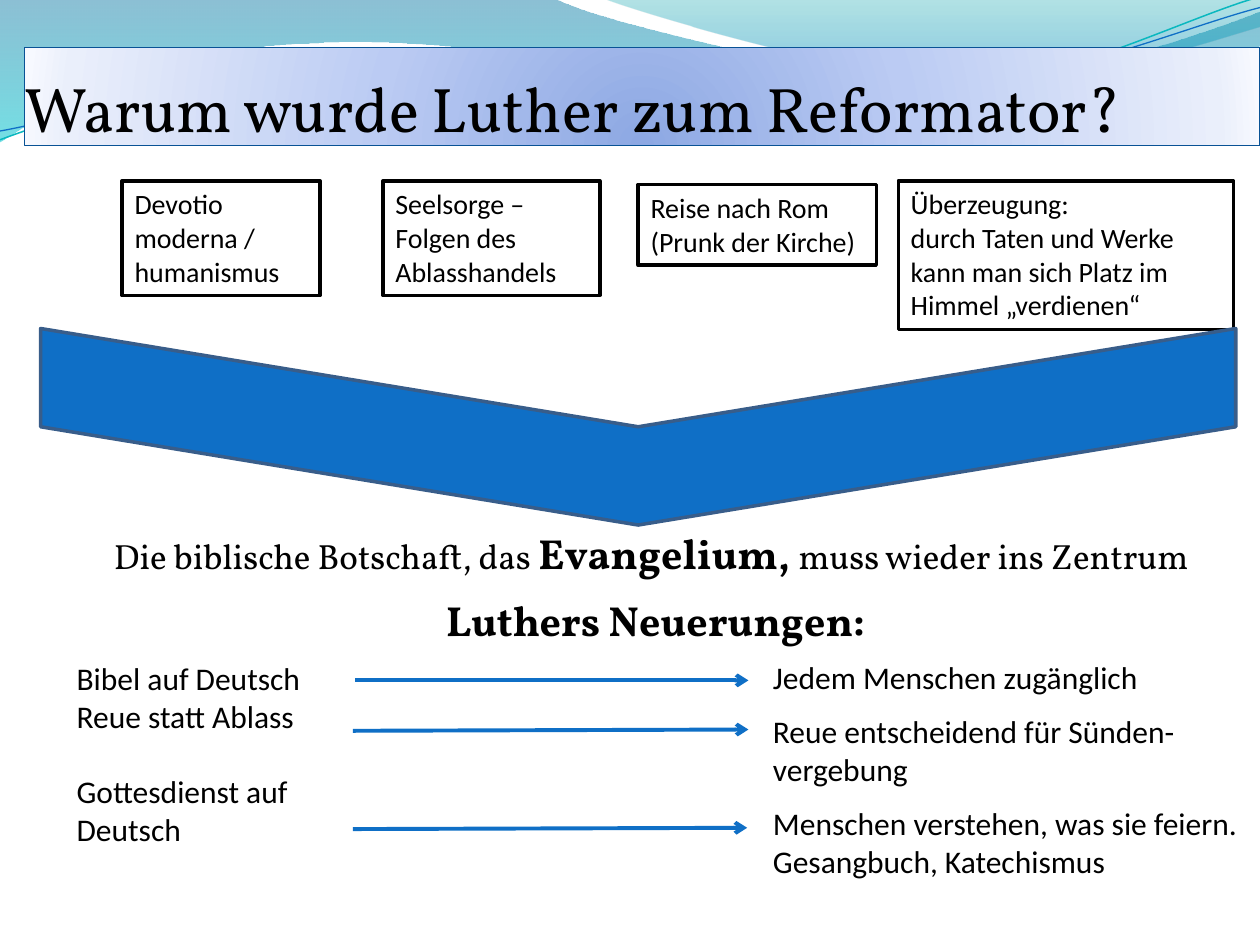
from lxml import etree
from pptx import Presentation
from pptx.dml.color import RGBColor
from pptx.enum.shapes import MSO_CONNECTOR, MSO_SHAPE
from pptx.enum.text import MSO_ANCHOR as Anchor, PP_ALIGN as Align
from pptx.oxml import parse_xml
from pptx.oxml.ns import nsdecls, qn
from pptx.util import Inches, Pt

color = RGBColor.from_string
BLUE = "0F6FC6"

presentation = Presentation()
presentation.slide_width, presentation.slide_height = Inches(10), Inches(7.5)
slide = presentation.slides.add_slide(presentation.slide_layouts[6])
shapes = slide.shapes

# Grid of 100 columns and 75 rows; all positions below count in these.
COLUMN = presentation.slide_width // 100
ROW = presentation.slide_height // 75


def set_gradient(shape, stops, direction):
    """Fill with (position %, colour, opacity %) stops along an a:lin or a:path."""
    shape.fill.background()
    stop_xml = "".join(
        f'<a:gs pos="{position * 1000}"><a:srgbClr val="{value}">'
        f'<a:alpha val="{opacity * 1000}"/></a:srgbClr></a:gs>'
        for position, value, opacity in stops)
    gradient = parse_xml(f'<a:gradFill {nsdecls("a")} rotWithShape="1">'
                         f'<a:gsLst>{stop_xml}</a:gsLst>{direction}</a:gradFill>')
    properties = shape._element.spPr
    properties.replace(properties.find(qn("a:noFill")), gradient)


def write(shape, font_name, paragraphs, align=Align.LEFT):
    """Write paragraphs given as (space before, [(text, size, bold), ...])."""
    frame = shape.text_frame
    frame.word_wrap = True
    for index, (space, runs) in enumerate(paragraphs):
        paragraph = frame.add_paragraph() if index else frame.paragraphs[0]
        paragraph.alignment = align
        if space:
            paragraph.space_before = Pt(space)
        for text, size, bold in runs:
            run = paragraph.add_run()
            run.text = text
            run.font.name, run.font.size, run.font.bold = font_name, Pt(size), bold
            run.font.color.rgb = color("000000")


# Header waves: one point is a straight step, three points are a Bézier curve.
DOWN = '<a:lin ang="5400000" scaled="0"/>'
waves = [
    ((0, 0), [[(44, -0.1)], [(47.6, 1.7), (66.4, 6.3), (75.8, 6.3)],
              [(85.3, 6.3), (95.8, 2.6), (100, 0.9)], [(100.1, 3.6)],
              [(98.3, 4.4), (87, 7.6), (74.6, 7.5)],
              [(62.2, 7.5), (38.2, 2.8), (25.7, 3.4)],
              [(12.9, 3.6), (4.6, 8.3), (-0.1, 11.3)]],
     [(0, "0074A1", 45), (100, "00C6CF", 55)], None),
    ((47.9, -0.1), [[(50.9, 1.1), (68.2, 6.2), (76.9, 6.5)],
                    [(85.6, 6.9), (96.1, 3.2), (100, 2.1)], [(100, 0)]],
     [(0, "00A1A9", 30), (80, "008BBF", 45)], None),
    ((0, 11.1), [[(4.8, 9.3), (15.8, 5.7), (27.7, 5.2)],
                 [(39.5, 4.7), (59.3, 8.9), (71.3, 8)],
                 [(83.3, 7.1), (93.8, 1.5), (99.8, -0.2)]], None, ("0AB8BF", 0.85)),
    ((0, 10.4), [[(4.7, 9.6), (16.4, 6.1), (28.3, 5.6)],
                 [(40.3, 5.1), (59.7, 8.4), (71.7, 7.5)],
                 [(83.6, 6.7), (94.1, 2.1), (100, 0.6)]], None, (BLUE, 0.75)),
]
for start, segments, stops, outline in waves:
    vertices = [(int(x * COLUMN), int(y * ROW))
                for x, y in [start, *(point for segment in segments for point in segment)]]
    builder = shapes.build_freeform(*vertices[0], scale=1.0)
    builder.add_line_segments(vertices[1:], close=bool(stops))
    wave = builder.convert_to_shape()
    steps = iter(list(wave._element.iter(qn("a:lnTo"))))
    for segment in segments:
        first, *others = [next(steps) for _ in segment]
        if others:
            first.tag = qn("a:cubicBezTo")
            for other in others:
                first.append(other[0])
                other.getparent().remove(other)
    wave.shadow.inherit = False
    if stops:
        set_gradient(wave, stops, DOWN)
        wave.line.fill.background()
    else:
        wave.fill.background()
        wave.line.color.rgb, wave.line.width = color(outline[0]), Pt(outline[1])

# Title bar
title = shapes.add_shape(MSO_SHAPE.RECTANGLE, int(1.95 * COLUMN), int(3.75 * ROW),
                         int(98.05 * COLUMN), int(7.8 * ROW))
title.shadow.inherit = False
set_gradient(title, [(0, "8DA8E3", 100), (43, "BBCBF3", 100),
                     (93, "EAEFFB", 100), (100, "F7F9FF", 100)],
             '<a:path path="circle"><a:fillToRect l="50000" t="130000" '
             'r="50000" b="-30000"/></a:path>')
title.line.color.rgb, title.line.width = color("095295"), Pt(0.75)
title.text_frame.vertical_anchor = Anchor.BOTTOM
title.text_frame.margin_left = title.text_frame.margin_right = 0
title.text_frame.margin_bottom = 0
write(title, "Vollkorn", [(0, [("Warum wurde Luther zum Reformator?", 36, False)])])

# Central message
message = shapes.add_textbox(int(6.7 * COLUMN), int(41.4 * ROW), 90 * COLUMN, int(20.9 * ROW))
write(message, "Vollkorn", [
    (0, [("Die biblische Botschaft, das ", 20, False), ("Evangelium, ", 24, True),
         ("muss wieder ins Zentrum", 20, False)]),
    (9, [(" Luthers Neuerungen:", 24, True)]),
], Align.CENTER)

# Influences on Luther
influences = [
    (9.7, 14.35, 15.7, 9.1, ["Devotio moderna / humanismus"]),
    (50.65, 14.65, 18.9, 6.4, ["Reise nach Rom", "(Prunk der Kirche)"]),
    (30.4, 14.35, 17.2, 9.1, ["Seelsorge – Folgen des Ablasshandels"]),
    (71.3, 14.35, 26.6, 11.8,
     ["Überzeugung:", "durch Taten und Werke kann man sich Platz im Himmel „verdienen“"]),
]
for left, top, width, height, lines in influences:
    box = shapes.add_shape(MSO_SHAPE.RECTANGLE, int(left * COLUMN), int(top * ROW),
                           int(width * COLUMN), int(height * ROW))
    box.shadow.inherit = False
    box.fill.solid()
    box.fill.fore_color.rgb = color("FFFFFF")
    box.line.color.rgb, box.line.width = color("000000"), Pt(2)
    box.text_frame.vertical_anchor = Anchor.TOP
    write(box, "Calibri", [(0, [(line, 16, False)]) for line in lines])

# Chevron turned to point down
chevron = shapes.add_shape(MSO_SHAPE.CHEVRON, int(42.85 * COLUMN), int(-13.55 * ROW),
                           int(15.6 * COLUMN), int(94.85 * ROW))
chevron.rotation = 90
chevron.adjustments[0] = 0.5
chevron.shadow.inherit = False
chevron.fill.solid()
chevron.fill.fore_color.rgb = color(BLUE)
chevron.line.color.rgb, chevron.line.width = color("385D8A"), Pt(2)

# Innovations and their effects
effects = shapes.add_textbox(int(58.7 * COLUMN), int(51.7 * ROW),
                             int(41.3 * COLUMN), int(21.9 * ROW))
effects.text_frame.margin_left = int(2.65 * COLUMN)
innovations = shapes.add_textbox(int(5.1 * COLUMN), int(51.8 * ROW),
                                 int(24.9 * COLUMN), int(18.7 * ROW))
columns = [
    (effects, [(0, "Jedem Menschen zugänglich"), (9.5, "Reue entscheidend für Sünden-"),
               (0, "vergebung"), (9.5, "Menschen verstehen, was sie feiern."),
               (0, "Gesangbuch, Katechismus")]),
    (innovations, [(0, "Bibel auf Deutsch"), (0, "Reue statt Ablass"),
                   (21.5, "Gottesdienst auf Deutsch")]),
]
for textbox, lines in columns:
    write(textbox, "Calibri", [(space, [(line, 18, False)]) for space, line in lines])

arrows = [(28.2, 54, 59.4, 54), (28, 58, 59.4, 57.9), (28, 65.8, 59.3, 65.7)]
for left, start_row, right, end_row in arrows:
    arrow = shapes.add_connector(MSO_CONNECTOR.STRAIGHT,
                                 int(left * COLUMN), int(start_row * ROW),
                                 int(right * COLUMN), int(end_row * ROW))
    arrow.line.color.rgb, arrow.line.width = color(BLUE), Pt(2.25)
    etree.SubElement(arrow.line._get_or_add_ln(), qn("a:tailEnd"), type="arrow")
    etree.SubElement(arrow._element.spPr, qn("a:effectLst"))

presentation.save("out.pptx")
